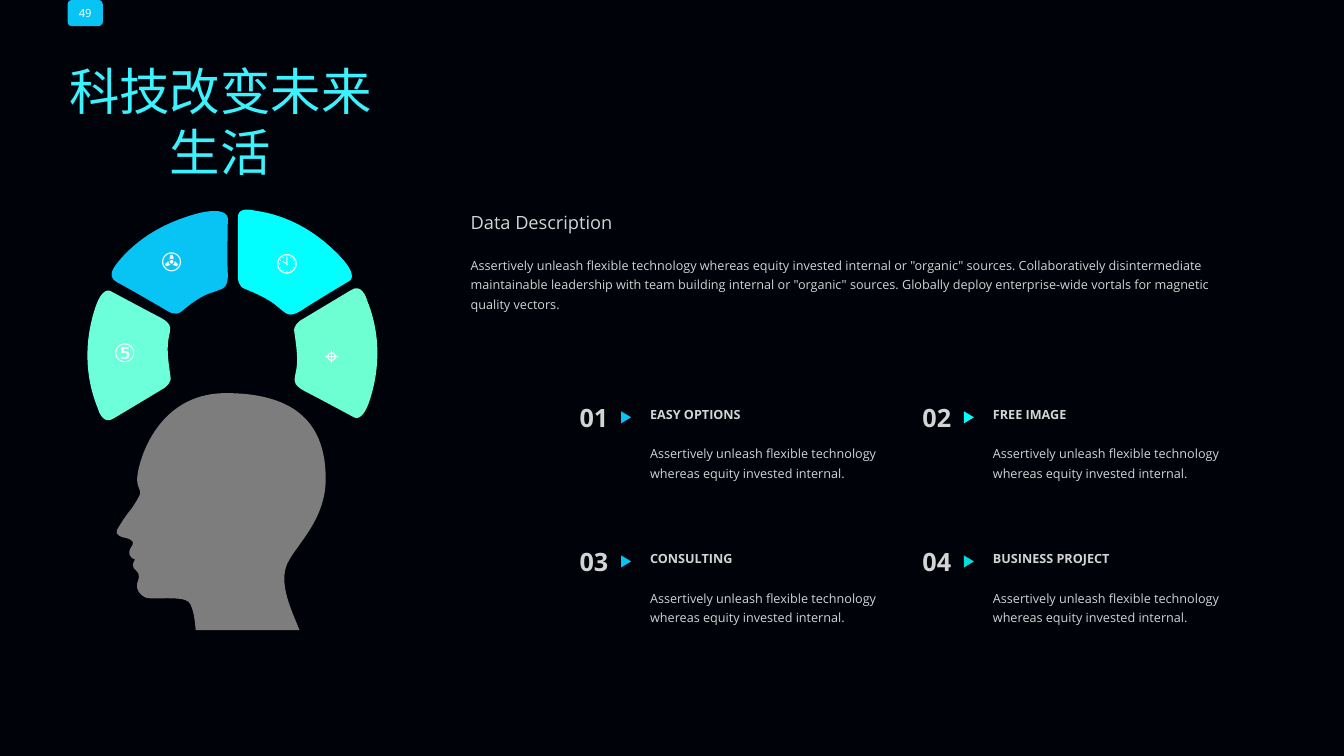
from lxml import etree
from pptx import Presentation
from pptx.dml.color import RGBColor
from pptx.enum.shapes import MSO_SHAPE
from pptx.enum.text import MSO_ANCHOR, MSO_AUTO_SIZE, PP_ALIGN
from pptx.oxml.ns import qn
from pptx.util import Inches, Pt

ROUNDED, TRIANGLE = MSO_SHAPE.ROUNDED_RECTANGLE, MSO_SHAPE.ISOSCELES_TRIANGLE
TOP, MIDDLE = MSO_ANCHOR.TOP, MSO_ANCHOR.MIDDLE
LEFT, CENTER = PP_ALIGN.LEFT, PP_ALIGN.CENTER
FIT, NO_FIT = MSO_AUTO_SIZE.SHAPE_TO_FIT_TEXT, MSO_AUTO_SIZE.NONE

COLORS = {
    "background": "000209", "title": "3CF2FF", "text": "D4D4D4",
    "white": "FFFFFF", "blue": "08C4F5", "cyan": "02FFFF", "teal": "02DDDA",
    "green": "6DFFD1", "mint": "6DFFD9", "head": "7D7D7D",
}
SANS, CJK, SYMBOL = "Open Sans", "Noto Sans CJK SC", "Arial"

# Text formats
TITLE = {"name": CJK, "size": Pt(36), "color": "title"}
BADGE = {"name": SANS, "size": Pt(8), "color": "white"}
ICON = {"name": SYMBOL, "size": Pt(18), "color": "white"}
NUMBER = {"name": SANS, "size": Pt(18), "bold": True, "color": "text"}
HEADING = {"name": SANS, "size": Pt(13), "color": "text"}
OPTION = {"name": SANS, "size": Pt(9), "bold": True, "color": "text"}
BODY = {"name": SANS, "size": Pt(9), "bold": False, "color": "text"}

# Outlines: a start point, then Bezier segments (control, control, end)
RIGHT_PETAL = [
    (3.02, 3.88),
    (3.1, 3.92, 3.51, 4.14, 3.51, 4.14), (3.51, 4.14, 3.6, 4.21, 3.68, 3.93),
    (3.76, 3.66, 3.78, 3.32, 3.64, 2.98), (3.63, 2.94, 3.58, 2.81, 3.48, 2.88),
    (3.38, 2.94, 2.98, 3.18, 2.98, 3.18), (2.98, 3.18, 2.9, 3.23, 2.92, 3.3),
    (2.93, 3.38, 2.96, 3.54, 2.94, 3.66), (2.92, 3.77, 2.89, 3.81, 3.02, 3.88),
]
# The left petal is the right one turned by half around the ring's middle
LEFT_PETAL = [tuple((4.61, 7.03)[i % 2] - v for i, v in enumerate(seg))
              for seg in RIGHT_PETAL]
TOP_RIGHT_PETAL = [
    (2.99, 3.08),
    (3.06, 3.03, 3.46, 2.79, 3.46, 2.79), (3.46, 2.79, 3.57, 2.75, 3.37, 2.54),
    (3.17, 2.33, 2.89, 2.14, 2.53, 2.09), (2.48, 2.08, 2.35, 2.05, 2.36, 2.17),
    (2.36, 2.29, 2.36, 2.76, 2.36, 2.76), (2.36, 2.76, 2.36, 2.85, 2.44, 2.87),
    (2.51, 2.9, 2.66, 2.96, 2.75, 3.04), (2.84, 3.11, 2.86, 3.16, 2.99, 3.08),
]
TOP_LEFT_PETAL = [
    (2.26, 2.72),
    (2.25, 2.63, 2.26, 2.17, 2.26, 2.17), (2.26, 2.17, 2.27, 2.05, 1.99, 2.11),
    (1.71, 2.18, 1.4, 2.32, 1.17, 2.6), (1.14, 2.64, 1.05, 2.74, 1.16, 2.8),
    (1.26, 2.85, 1.67, 3.09, 1.67, 3.09), (1.67, 3.09, 1.74, 3.14, 1.8, 3.09),
    (1.86, 3.04, 1.99, 2.93, 2.11, 2.9), (2.21, 2.86, 2.26, 2.87, 2.26, 2.72),
]
HEAD = [
    (2.85, 5.59),
    (2.76, 5.79, 2.89, 6.05, 2.97, 6.25), (2.66, 6.25, 1.94, 6.25, 1.94, 6.25),
    (1.94, 6.25, 1.93, 6.03, 1.87, 5.97), (1.8, 5.91, 1.52, 5.95, 1.45, 5.93),
    (1.38, 5.9, 1.35, 5.85, 1.36, 5.79), (1.38, 5.74, 1.39, 5.69, 1.35, 5.66),
    (1.31, 5.63, 1.31, 5.59, 1.34, 5.55), (1.27, 5.53, 1.27, 5.47, 1.3, 5.43),
    (1.33, 5.39, 1.33, 5.36, 1.26, 5.34), (1.19, 5.33, 1.14, 5.3, 1.16, 5.26),
    (1.18, 5.22, 1.25, 5.11, 1.31, 5.04), (1.36, 4.96, 1.4, 4.9, 1.39, 4.88),
    (1.39, 4.86, 1.36, 4.82, 1.36, 4.76), (1.36, 4.61, 1.54, 3.9, 2.24, 3.9),
    (2.95, 3.9, 3.23, 4.22, 3.23, 4.75), (3.23, 5.16, 2.94, 5.4, 2.85, 5.59),
]
OUTLINES = [(RIGHT_PETAL, "green"), (TOP_RIGHT_PETAL, "cyan"),
            (LEFT_PETAL, "mint"), (TOP_LEFT_PETAL, "blue"), (HEAD, "head")]
ICONS = [("⌖", 3.12, 3.33, 0.45), ("🕙", 2.64, 2.39, 0.47),
         ("✇", 1.5, 2.39, 0.47), ("⑤", 1.03, 3.3, 0.47)]

DESCRIPTION = (
    'Assertively unleash flexible technology whereas equity invested internal or '
    '"organic" sources. Collaboratively disintermediate maintainable leadership '
    'with team building internal or "organic" sources. Globally deploy '
    'enterprise-wide vortals for magnetic quality vectors.')
OPTION_TEXT = "Assertively unleash flexible technology whereas equity invested internal."
OPTIONS = [("EASY OPTIONS", "blue"), ("FREE IMAGE", "cyan"),
           ("CONSULTING", "blue"), ("BUSINESS PROJECT", "teal")]


def rgb(name):
    return RGBColor.from_string(COLORS[name])


def paint(sp, color):
    sp.shadow.inherit = False
    sp.fill.solid()
    sp.fill.fore_color.rgb = rgb(color)
    sp.line.fill.background()


def write(tf, paragraphs, wrap=True, align=LEFT, anchor=TOP, fit=FIT,
          spacing=None, gap=0):
    """Fill a text frame with (text, format) paragraphs."""
    tf.word_wrap, tf.auto_size, tf.vertical_anchor = wrap, fit, anchor
    for i, (text, fmt) in enumerate(paragraphs):
        p = tf.add_paragraph() if i else tf.paragraphs[0]
        p.alignment = align
        if spacing:
            p.line_spacing = spacing
        if i < len(paragraphs) - 1:
            p.space_after = Pt(gap)
        r = p.add_run()
        r.text = text
        for key, value in fmt.items():
            if key == "color":
                r.font.color.rgb = rgb(value)
            else:
                setattr(r.font, key, value)


def add_text(s, x, y, w, h, paragraphs, **options):
    sp = s.shapes.add_textbox(Inches(x), Inches(y), Inches(w), Inches(h))
    write(sp.text_frame, paragraphs, **options)


def add_block(s, x, y, w, h, heading, body):
    add_text(s, x, y, w, h, [heading, body], spacing=1.3, gap=14.3)


def add_preset(s, kind, x, y, w, h, color):
    sp = s.shapes.add_shape(kind, Inches(x), Inches(y), Inches(w), Inches(h))
    paint(sp, color)
    return sp


def add_outline(s, outline, color):
    """Draw a closed outline, turning each three points into one Bezier curve."""
    start, *curves = outline
    points = [(Inches(seg[i]), Inches(seg[i + 1]))
              for seg in curves for i in (0, 2, 4)]
    builder = s.shapes.build_freeform(Inches(start[0]), Inches(start[1]))
    builder.add_line_segments(points, close=True)
    sp = builder.convert_to_shape()
    lines = list(sp._element.iter(qn("a:lnTo")))
    for i in range(0, len(lines), 3):
        curve = etree.Element(qn("a:cubicBezTo"))
        lines[i].addprevious(curve)
        for line in lines[i:i + 3]:
            curve.append(line[0])
            line.getparent().remove(line)
    paint(sp, color)


def add_title(s, text):
    sp = s.shapes.title
    sp.left, sp.top, sp.width, sp.height = map(Inches, (0.57, 0.55, 3.23, 0.71))
    write(sp.text_frame, [(text, TITLE)], align=CENTER, fit=NO_FIT)
    rpr = sp.text_frame.paragraphs[0].runs[0].font._element
    etree.SubElement(rpr, qn("a:ea")).set("typeface", CJK)


def add_option(s, index, name, color):
    row, col = divmod(index, 2)
    x, y = 5.65 + 3.4 * col, 3.94 + 1.43 * row
    add_text(s, x, y, 0.49, 0.4, [(f"{index + 1:02}", NUMBER)], wrap=False)
    add_preset(s, TRIANGLE, x + 0.5, y + 0.15, 0.12, 0.1, color).rotation = 90
    add_block(s, x + 0.7, y, 2.61, 0.89, (name, OPTION), (OPTION_TEXT, BODY))


def main():
    prs = Presentation()
    prs.slide_width, prs.slide_height = Inches(13.33), Inches(7.5)
    s = prs.slides.add_slide(prs.slide_layouts[5])
    s.background.fill.solid()
    s.background.fill.fore_color.rgb = rgb("background")

    # Title and page badge
    add_title(s, "科技改变未来生活")
    badge = add_preset(s, ROUNDED, 0.67, 0, 0.35, 0.26, "blue")
    write(badge.text_frame, [("49", BADGE)], wrap=False, align=CENTER,
          anchor=MIDDLE, fit=NO_FIT)

    # Head with its ring of petals
    for outline, color in OUTLINES:
        add_outline(s, outline, color)
    for symbol, x, y, width in ICONS:
        add_text(s, x, y, width, 0.4, [(symbol, ICON)], wrap=False)

    # Description and numbered options
    add_block(s, 4.57, 1.98, 7.79, 1.17,
              ("Data Description", HEADING), (DESCRIPTION, BODY))
    for index, (name, color) in enumerate(OPTIONS):
        add_option(s, index, name, color)

    prs.save("out.pptx")


if __name__ == "__main__":
    main()
